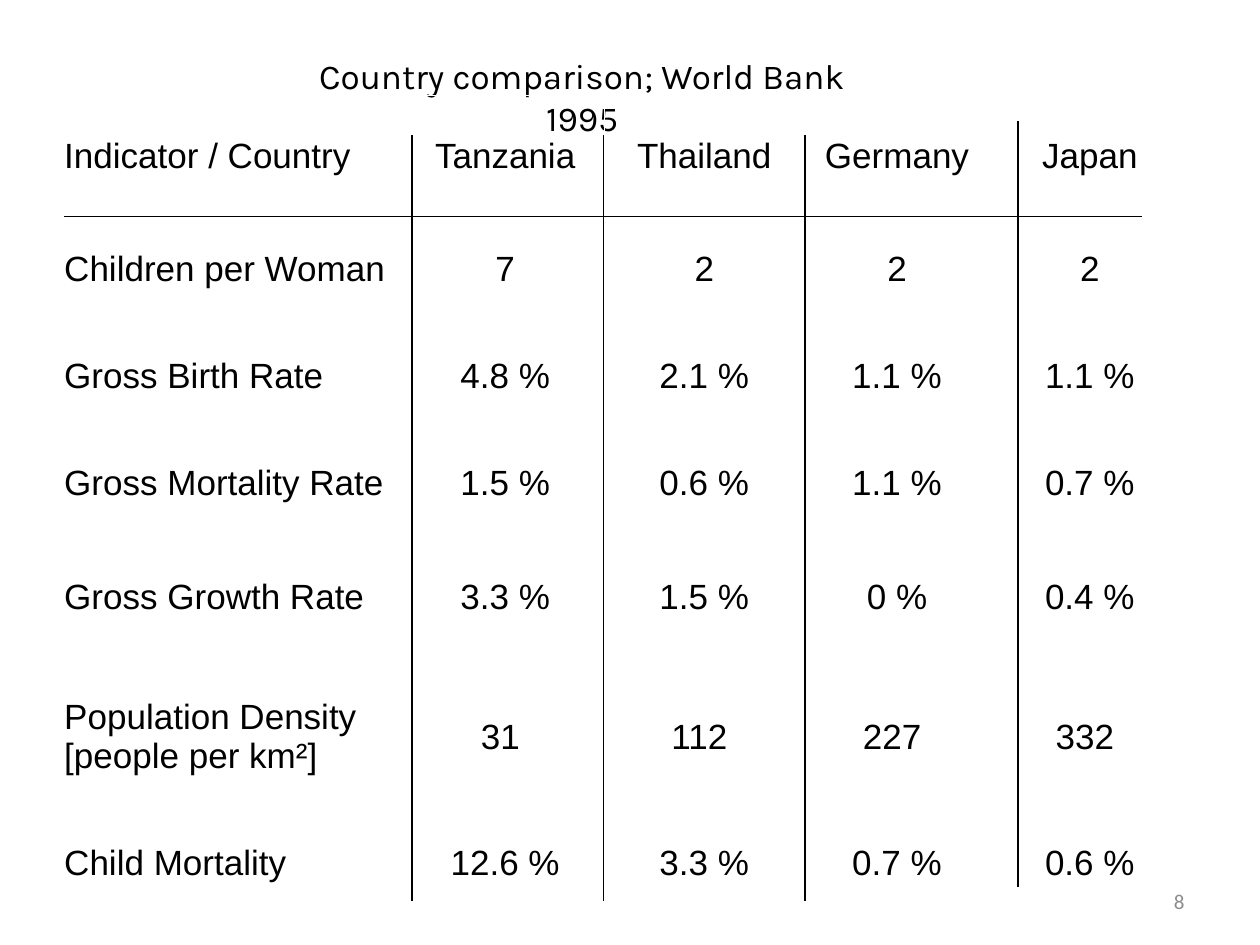
from itertools import accumulate

from lxml import etree
from pptx import Presentation
from pptx import util as u
from pptx.dml import color
from pptx.enum import shapes, text
from pptx.oxml import ns

COLORS = {"ink": "000000", "page_number": "8C8C8C"}

ROWS = [
    ["Indicator / Country", "Tanzania", "Thailand", "Germany", "Japan"],
    ["Children per Woman", "7", "2", "2", "2"],
    ["Gross Birth Rate", "4.8 %", "2.1 %", "1.1 %", "1.1 %"],
    ["Gross Mortality Rate", "1.5 %", "0.6 %", "1.1 %", "0.7 %"],
    ["Gross Growth Rate", "3.3 %", "1.5 %", "0 %", "0.4 %"],
    ["Population Density [people per km²]", "31 ", "112 ", "227 ", "332 "],
    ["Child Mortality", "12.6 %", "3.3 %", "0.7 %", "0.6 %"],
]
COLUMN_WIDTHS = [2.81, 1.58, 1.58, 1.48, 1.58]
ROW_HEIGHTS = [0.96, 0.84, 0.85, 0.85, 0.97, 1.24, 0.76]


def format_text(frame, size, font, ink, align):
    for paragraph in frame.paragraphs:
        paragraph.alignment = align
        for run in paragraph.runs:
            run.font.size = u.Pt(size)
            run.font.name = font
            run.font.bold = False
            run.font.color.rgb = color.RGBColor.from_string(COLORS[ink])


def place(shape, box):
    shape.left, shape.top, shape.width, shape.height = map(u.Inches, box)


def add_title(slide, box):
    title = slide.shapes.title
    place(title, box)
    frame = title.text_frame
    frame.text = "Country comparison; World Bank 1995"
    frame.word_wrap = True
    frame.auto_size = text.MSO_AUTO_SIZE.NONE
    frame.vertical_anchor = text.MSO_ANCHOR.TOP
    format_text(frame, 20, "Karla", "ink", text.PP_ALIGN.CENTER)


def add_rule(slide, x1, y1, x2, y2):
    rule = slide.shapes.add_connector(
        shapes.MSO_CONNECTOR.STRAIGHT, *map(u.Inches, (x1, y1, x2, y2)))
    rule.line.width = u.Pt(0.75)
    rule.line.color.rgb = color.RGBColor.from_string(COLORS["ink"])
    etree.SubElement(rule._element.spPr, ns.qn("a:effectLst"))


def add_comparison(slide, left, top):
    # Indicators and values
    width, height = sum(COLUMN_WIDTHS), sum(ROW_HEIGHTS)
    table = slide.shapes.add_table(
        len(ROWS), len(COLUMN_WIDTHS),
        *map(u.Inches, (left, top, width, height))).table
    table.first_row = table.horz_banding = False
    for column, column_width in zip(table.columns, COLUMN_WIDTHS):
        column.width = u.Inches(column_width)
    for row, row_height, values in zip(table.rows, ROW_HEIGHTS, ROWS):
        row.height = u.Inches(row_height)
        for index, (cell, value) in enumerate(zip(row.cells, values)):
            cell.text_frame.text = value
            cell.fill.background()
            cell.vertical_anchor = text.MSO_ANCHOR.MIDDLE
            align = text.PP_ALIGN.CENTER if index else text.PP_ALIGN.LEFT
            format_text(cell.text_frame, 20, "Arial", "ink", align)

    # Rule under the header
    header_y = top + ROW_HEIGHTS[0]
    add_rule(slide, left + 0.1, header_y, left + 8.65, header_y)

    # Column rules, each nudged off its column edge; the last sits higher
    edges = accumulate(COLUMN_WIDTHS[:-1], initial=left)
    next(edges)
    nudges = [(0.05, 0.31), (-0.01, 0.31), (0.01, 0.31), (0.22, 0.2)]
    for edge, (dx, dy) in zip(edges, nudges):
        add_rule(slide, edge + dx, top + dy, edge + dx, top + dy + 6.08)


def add_page_number(slide, box):
    page_number = slide.shapes.add_textbox(*map(u.Inches, box))
    frame = page_number.text_frame
    frame.text = "8"
    frame.word_wrap = True
    frame.vertical_anchor = text.MSO_ANCHOR.MIDDLE
    format_text(frame, 12, "Calibri", "page_number", text.PP_ALIGN.RIGHT)


def main():
    deck = Presentation()
    deck.slide_width, deck.slide_height = u.Inches(10), u.Inches(7.5)
    slide = deck.slides.add_slide(deck.slide_layouts.get_by_name("Title Only"))
    add_comparison(slide, 0.41, 0.76)
    add_page_number(slide, (7.17, 6.95, 2.33, 0.4))
    add_title(slide, (2.23, 0.38, 4.78, 0.44))
    deck.save("out.pptx")


if __name__ == "__main__":
    main()
